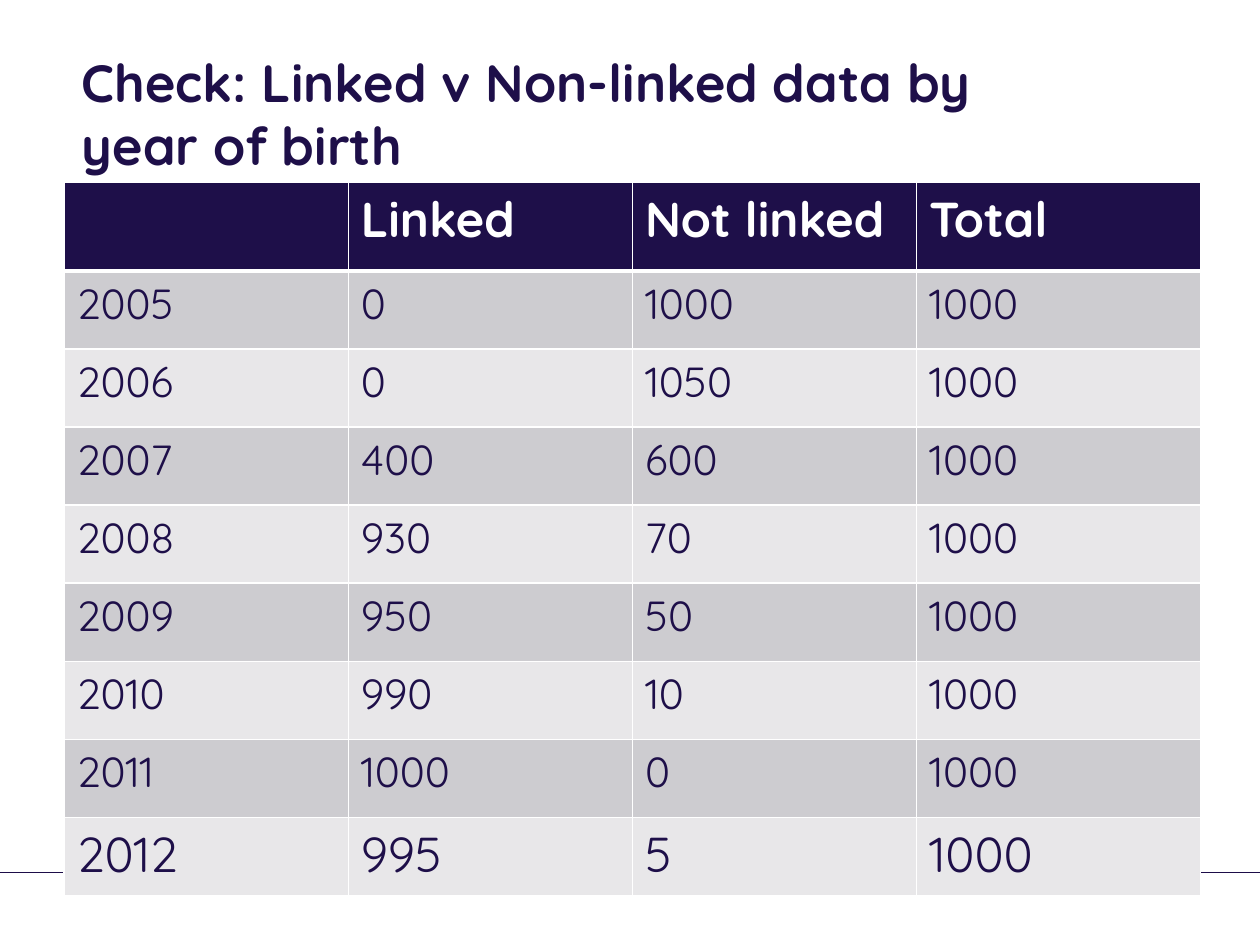
"""Build a slide with a table of linked and non-linked data by year of birth."""
import pptx
import pptx.dml.color
import pptx.enum.text
import pptx.oxml.ns
import pptx.util
from lxml import etree

HUES = {"navy": "1E0F49", "rule": "1D0D49", "white": "FFFFFF", "dark": "CDCCD0", "light": "E8E7E9"}
FACE = "Quicksand"
HEAD = ["", "Linked", "Not linked", "Total"]
DATA = [
    (2005, 0, 1000, 1000),
    (2006, 0, 1050, 1000),
    (2007, 400, 600, 1000),
    (2008, 930, 70, 1000),
    (2009, 950, 50, 1000),
    (2010, 990, 10, 1000),
    (2011, 1000, 0, 1000),
    (2012, 995, 5, 1000),
]
inch = pptx.util.Inches
qn = pptx.oxml.ns.qn


def style(para, size, hue, bold):
    for run in para.runs:
        run.font.name = FACE
        run.font.size = pptx.util.Pt(size)
        run.font.bold = bold
        run.font.color.rgb = pptx.dml.color.RGBColor.from_string(HUES[hue])


def edge(cell, side, width):
    props = cell._tc.get_or_add_tcPr()
    line = etree.SubElement(props, qn("a:ln" + side), w=str(pptx.util.Pt(width)))
    fill = etree.SubElement(line, qn("a:solidFill"))
    etree.SubElement(fill, qn("a:srgbClr"), val=HUES["white"])


deck = pptx.Presentation()
deck.slide_width, deck.slide_height = inch(10), inch(7.5)
slide = deck.slides.add_slide(deck.slide_layouts[5])

title = slide.shapes.title
title.left, title.top, title.width, title.height = map(inch, (0.55, 0.36, 8.26, 1.09))
frame = title.text_frame
frame.text = "Check: Linked v Non-linked data by year of birth"
frame.word_wrap = True
frame.auto_size = pptx.enum.text.MSO_AUTO_SIZE.NONE
frame.vertical_anchor = pptx.enum.text.MSO_ANCHOR.BOTTOM
frame.paragraphs[0].alignment = pptx.enum.text.PP_ALIGN.LEFT
style(frame.paragraphs[0], 30, "navy", True)

level = inch(6.92)
rule = slide.shapes.add_connector(
    pptx.enum.shapes.MSO_CONNECTOR.STRAIGHT, 0, level, deck.slide_width, level
)
rule.line.color.rgb = pptx.dml.color.RGBColor.from_string(HUES["rule"])
rule.line.width = pptx.util.Pt(0.25)
etree.SubElement(rule._element.spPr, qn("a:effectLst"))

rows = [HEAD] + DATA
last = len(rows) - 1
table = slide.shapes.add_table(
    len(rows), len(HEAD), inch(0.51), inch(1.45), inch(9.02), inch(5.64)
).table
for r, items in enumerate(rows):
    table.rows[r].height = inch(0.62 if r else 0.7)
    back = ("light", "dark")[r % 2] if r else "navy"
    for c, item in enumerate(items):
        cell = table.cell(r, c)
        cell.text_frame.text = str(item)
        size = 28 if r in (0, last) else 24
        style(cell.text_frame.paragraphs[0], size, "navy" if r else "white", r == 0)
        for side, width in (("L", 1), ("R", 1), ("T", 3 if r == 1 else 1), ("B", 1 if r else 3)):
            edge(cell, side, width)
        cell.fill.solid()
        cell.fill.fore_color.rgb = pptx.dml.color.RGBColor.from_string(HUES[back])

deck.save("out.pptx")
